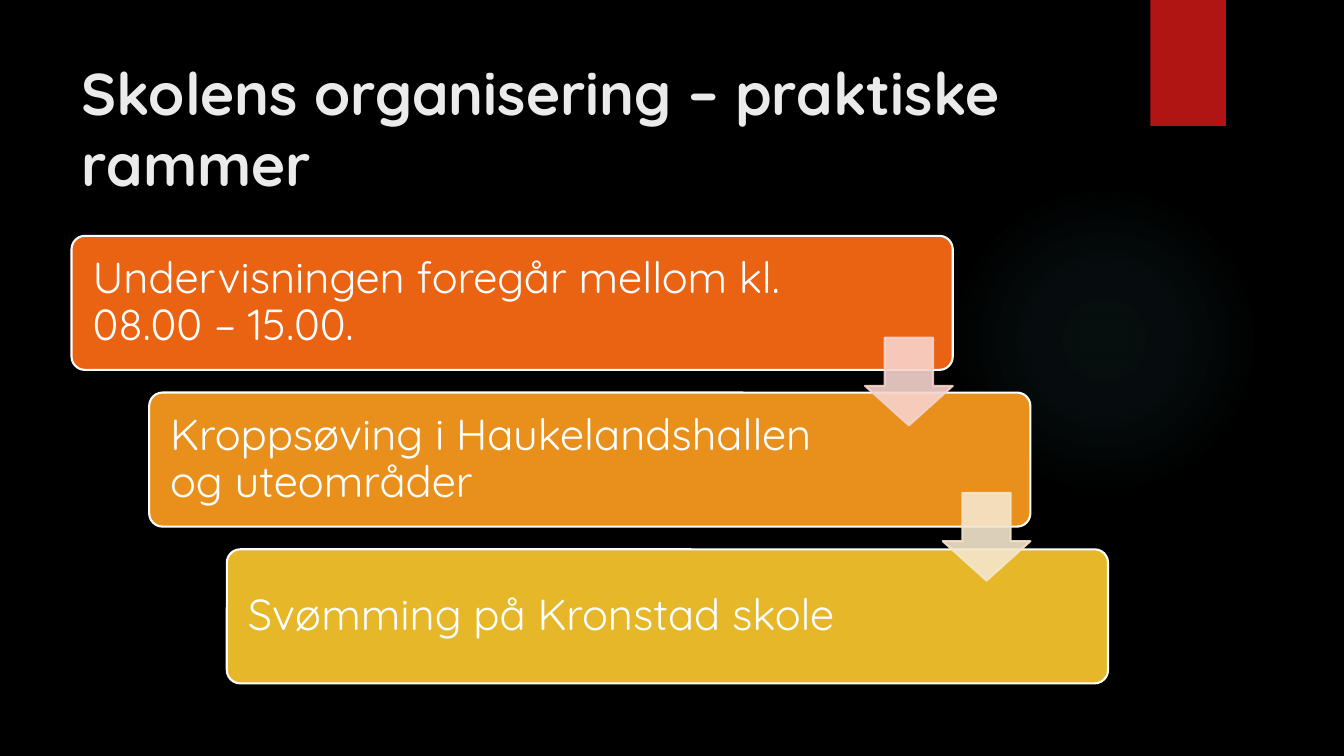
from dataclasses import dataclass

from lxml import etree
from pptx import Presentation
from pptx.dml.color import RGBColor
from pptx.enum import shapes, text
from pptx.oxml import parse_xml
from pptx.oxml.ns import nsdecls, qn
from pptx.util import Inches, Pt


@dataclass(frozen=True)
class Theme:
    font: str = "Quicksand"
    background: str = "000000"
    title: str = "EBEBEB"
    ribbon: str = "B01513"
    glow: str = "50B9C1"
    light: str = "FFFFFF"
    title_size: float = 42
    step_size: float = 31
    outline: float = 1.5


theme = Theme()


def add_filled(kind, left, top, width, height, color, line=None):
    shape = page.shapes.add_shape(
        kind, Inches(left), Inches(top), Inches(width), Inches(height))
    shape.shadow.inherit = False
    shape.fill.solid()
    shape.fill.fore_color.rgb = RGBColor.from_string(color)
    if line:
        shape.line.color.rgb = RGBColor.from_string(line)
        shape.line.width = Pt(theme.outline)
    else:
        shape.line.fill.background()
    return shape


def write(shape, words, size, color, bold=False):
    frame = shape.text_frame
    frame.text = words
    frame.word_wrap = True
    frame.auto_size = text.MSO_AUTO_SIZE.NONE
    frame.vertical_anchor = text.MSO_ANCHOR.MIDDLE
    para = frame.paragraphs[0]
    para.alignment = text.PP_ALIGN.LEFT
    span = para.runs[0]
    span.font.name = theme.font
    span.font.size = Pt(size)
    span.font.bold = bold
    span.font.color.rgb = RGBColor.from_string(color)
    return frame


deck = Presentation()
deck.slide_width, deck.slide_height = Inches(13.33), Inches(7.5)
page = deck.slides.add_slide(deck.slide_layouts[5])
page.background.fill.solid()
page.background.fill.fore_color.rgb = RGBColor.from_string(theme.background)

# Backdrop: a faint radial glow and the red ribbon
glow = add_filled(shapes.MSO_SHAPE.OVAL, 9.41, 1.83, 3.08, 3.08, theme.glow)
stops = "".join(
    f'<a:gs pos="{position * 1000}"><a:srgbClr val="{theme.glow}">'
    f'<a:alpha val="{opacity * 1000}"/></a:srgbClr></a:gs>'
    for position, opacity in ((0, 7), (36, 6), (69, 0)))
gradient = parse_xml(
    f'<a:gradFill {nsdecls("a")}><a:gsLst>{stops}</a:gsLst><a:path path="circle">'
    '<a:fillToRect l="50000" t="50000" r="50000" b="50000"/></a:path></a:gradFill>')
properties = glow._element.spPr
properties.replace(properties.find(qn("a:solidFill")), gradient)
add_filled(shapes.MSO_SHAPE.RECTANGLE, 11.41, 0, 0.75, 1.25, theme.ribbon)

title = page.shapes.title
title.left, title.top = Inches(0.71), Inches(0.5)
title.width, title.height = Inches(10.29), Inches(1.53)
write(title, "Skolens organisering – praktiske rammer",
      theme.title_size, theme.title, bold=True)

# Staircase of steps: wording, fill, right inset
steps = [
    ("Undervisningen foregår mellom kl. 08.00 – 15.00.", "EA6312", 1.52),
    ("Kroppsøving i Haukelandshallen og uteområder", "E9901C", 1.8),
    ("Svømming på Kronstad skole", "E6B729", 1.8),
]
step_left, step_top, step_width, step_height = 0.71, 2.34, 8.74, 1.33
shift_x, shift_y = 0.77, 1.555
for index, (words, color, right_inset) in enumerate(steps):
    card = add_filled(
        shapes.MSO_SHAPE.ROUNDED_RECTANGLE,
        step_left + index * shift_x, step_top + index * shift_y,
        step_width, step_height, color, theme.light)
    card.adjustments[0] = 0.1
    frame = write(card, words, theme.step_size, theme.light)
    frame.margin_left, frame.margin_right = Inches(0.17), Inches(right_inset)
    frame.margin_top = frame.margin_bottom = Inches(0.13)
    frame.paragraphs[0].line_spacing = 0.9

# Translucent arrows leading from each step to the next
arrow_size = 0.87
for index, color in enumerate(("F7D3CC", "F5E6CD")):
    arrow = add_filled(
        shapes.MSO_SHAPE.DOWN_ARROW,
        step_left + step_width - arrow_size + index * shift_x,
        3.35 + index * 1.54, arrow_size, arrow_size, color, color)
    arrow.adjustments[0], arrow.adjustments[1] = 0.55, 0.45
    for tint in arrow._element.spPr.iter(qn("a:srgbClr")):
        etree.SubElement(tint, qn("a:alpha")).set("val", "90000")

deck.save("out.pptx")
